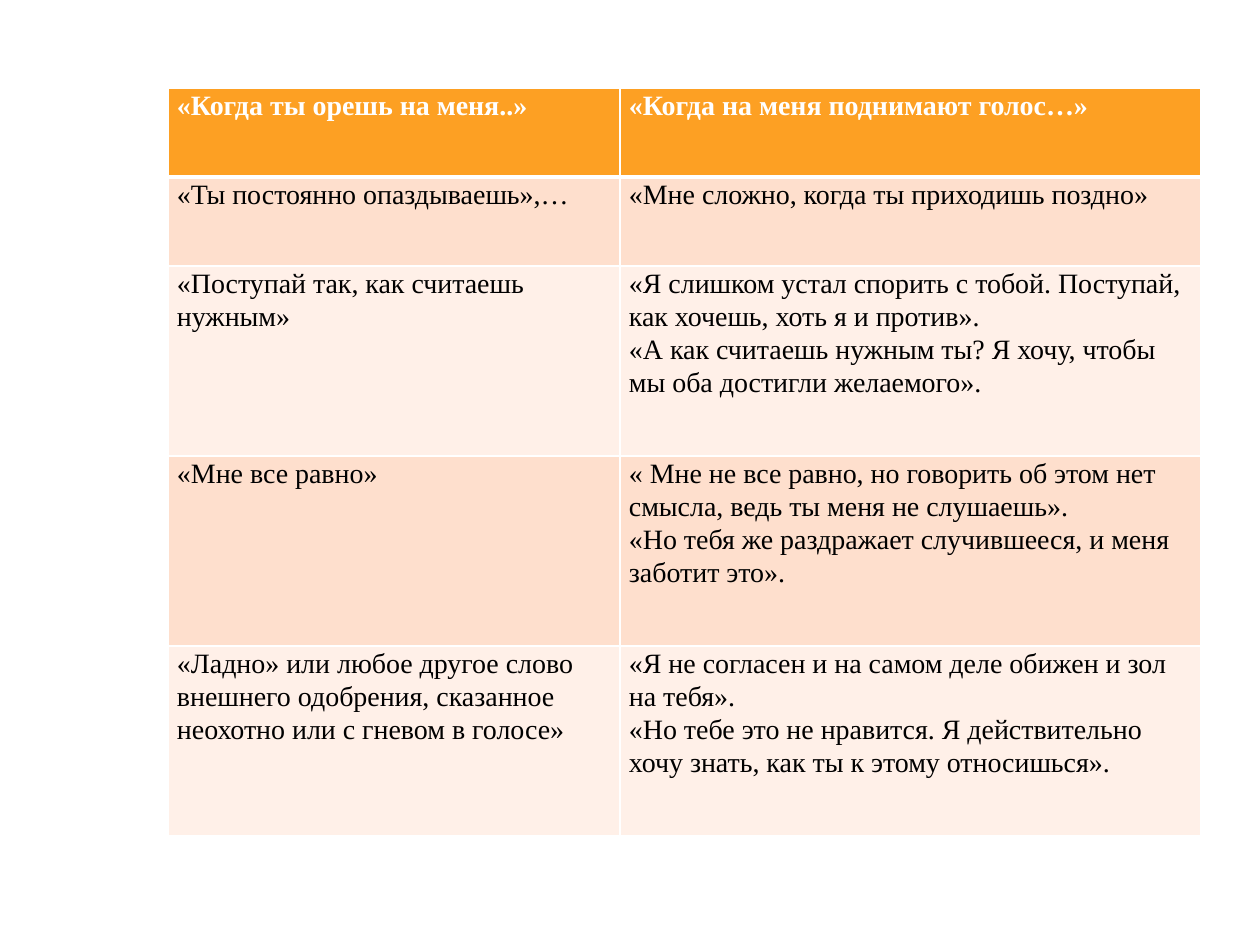
from lxml import etree
from pptx import Presentation
from pptx.dml.color import RGBColor
from pptx.enum.text import PP_ALIGN
from pptx.oxml.ns import qn
from pptx.util import Emu, Pt

LEFT, JUSTIFY = PP_ALIGN.LEFT, PP_ALIGN.JUSTIFY
PX = 914400 / 126
BLANK_LAYOUT = 6

COL_WIDTHS = [452, 581]
ROW_HEIGHTS = [89, 89, 190, 190, 190]

# Each cell is its alignment followed by its paragraphs.
PHRASES = [
    [(JUSTIFY, "«Когда ты орешь на меня..»"),
     (JUSTIFY, "«Когда на меня поднимают голос…»")],
    [(JUSTIFY, "«Ты постоянно опаздываешь»,…"),
     (JUSTIFY, "«Мне сложно, когда ты приходишь поздно»")],
    [(LEFT, "«Поступай так, как считаешь нужным»"),
     (LEFT, "«Я слишком устал спорить с тобой. Поступай, как хочешь, хоть я и против».",
      "«А как считаешь нужным ты? Я хочу, чтобы мы оба достигли желаемого».")],
    [(JUSTIFY, "«Мне все равно»"),
     (LEFT, "« Мне не все равно, но говорить об этом нет смысла, ведь ты меня не слушаешь».",
      "«Но тебя же раздражает случившееся, и меня заботит это».")],
    [(LEFT, "«Ладно» или любое другое слово внешнего одобрения, "
      "сказанное неохотно или с гневом в голосе»"),
     (LEFT, "«Я не согласен и на самом деле обижен и зол на тебя».",
      "«Но тебе это не нравится. Я действительно хочу знать, как ты к этому относишься».")],
]


def px(n):
    return Emu(round(n * PX))


def rgb(color):
    return RGBColor.from_string(color)


class Deck:
    font = "Times New Roman"
    size = 16
    line_spacing = 1.07
    header_fill = "FDA023"
    bands = ["FEDFCD", "FFF0E8"]
    border = "FFFFFF"

    def __init__(self, prs):
        self.s = prs.slides.add_slide(prs.slide_layouts[BLANK_LAYOUT])

    def table(self, x, y, cols, rows, data):
        frame = self.s.shapes.add_table(len(rows), len(cols), px(x), px(y),
                                        px(sum(cols)), px(sum(rows)))
        table = frame.table
        for col, width in zip(table.columns, cols):
            col.width = px(width)
        for row, height in zip(table.rows, rows):
            row.height = px(height)
        for i, row in enumerate(data):
            for j, (align, *paragraphs) in enumerate(row):
                self.cell(table.cell(i, j), i, align, paragraphs)

    def cell(self, cell, row, align, paragraphs):
        header = row == 0
        cell.margin_left = cell.margin_right = px(9)
        cell.margin_top = cell.margin_bottom = 0
        self.borders(cell, top=3 if row == 1 else 1, bottom=3 if header else 1)
        cell.fill.solid()
        fill = self.header_fill if header else self.bands[(row - 1) % 2]
        cell.fill.fore_color.rgb = rgb(fill)
        tf = cell.text_frame
        for i, text in enumerate(paragraphs):
            p = tf.add_paragraph() if i else tf.paragraphs[0]
            p.alignment = align
            p.line_spacing = self.line_spacing
            r = p.add_run()
            r.text = text
            r.font.name = self.font
            r.font.size = Pt(self.size)
            r.font.bold = header
            r.font.color.rgb = rgb("FFFFFF" if header else "000000")

    def borders(self, cell, top, bottom):
        """Draw the cell borders; must run before the fill is set."""
        tc_pr = cell._tc.get_or_add_tcPr()
        for side, width in (("L", 1), ("R", 1), ("T", top), ("B", bottom)):
            ln = etree.SubElement(tc_pr, qn(f"a:ln{side}"), w=str(Pt(width)))
            solid = etree.SubElement(ln, qn("a:solidFill"))
            etree.SubElement(solid, qn("a:srgbClr"), val=self.border)


def main():
    prs = Presentation()
    prs.slide_width, prs.slide_height = px(1260), px(945)
    deck = Deck(prs)
    deck.table(168, 88, COL_WIDTHS, ROW_HEIGHTS, PHRASES)
    prs.save("out.pptx")


if __name__ == "__main__":
    main()
